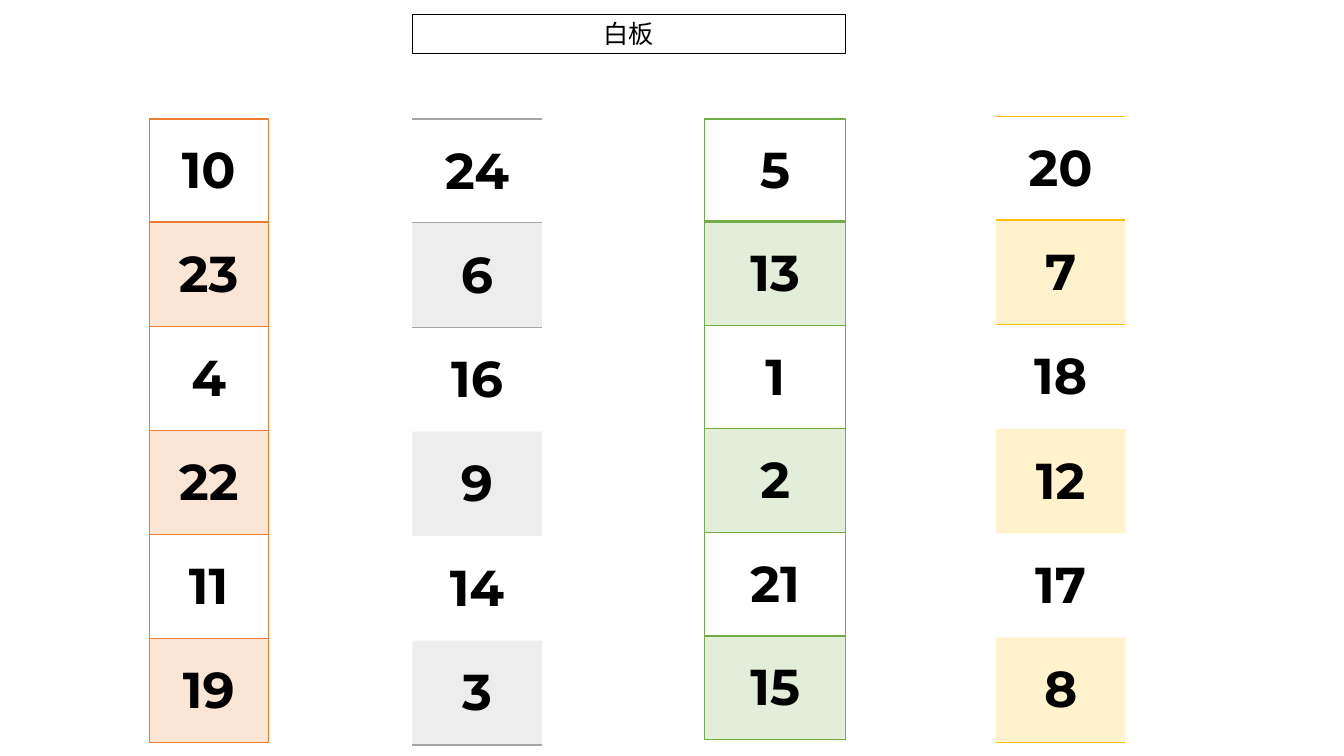
"""Build a whiteboard seating slide with four columns of seat numbers."""
from dataclasses import dataclass

from lxml.etree import SubElement
from pptx import Presentation
from pptx.dml.color import RGBColor
from pptx.enum.shapes import MSO_SHAPE
from pptx.enum.text import MSO_ANCHOR, PP_ALIGN
from pptx.oxml.ns import qn
from pptx.util import Pt

BLACK = RGBColor(0x00, 0x00, 0x00)
WHITE = RGBColor(0xFF, 0xFF, 0xFF)
ORANGE = RGBColor(0xED, 0x7D, 0x31)
GRAY = RGBColor(0xA5, 0xA5, 0xA5)
GREEN = RGBColor(0x70, 0xAD, 0x47)
GOLD = RGBColor(0xFF, 0xC0, 0x00)

NO_STYLE = "{2D5ABB26-0587-4C30-8999-92F81FD0307C}"
SEAT_FONT = {"name": "Montserrat", "size": Pt(36), "bold": True}
LABEL_FONT = {"name": "Calibri", "size": Pt(18), "bold": False}


@dataclass
class SeatColumn:
    """Hold the place, look and numbers of one column of seats."""
    left: float
    top: float
    width: float
    first_row: float
    other_row: float
    color: RGBColor
    gridded: bool
    seats: list


SEAT_COLUMNS = [
    SeatColumn(106.6, 85, 85, 73.6, 74.4, ORANGE, True, [10, 23, 4, 22, 11, 19]),
    SeatColumn(294.5, 85, 92.5, 74.2, 74.6, GRAY, False, [24, 6, 16, 9, 14, 3]),
    SeatColumn(503.3, 85, 100.8, 73.3, 74, GREEN, True, [5, 13, 1, 2, 21, 15]),
    SeatColumn(711.4, 83, 92.5, 74.2, 74.6, GOLD, False, [20, 7, 18, 12, 17, 8]),
]


def write_text(text_frame, text, font_format):
    """Write one centred black paragraph."""
    paragraph = text_frame.paragraphs[0]
    paragraph.alignment = PP_ALIGN.CENTER
    run = paragraph.add_run()
    run.text = text
    for name, value in font_format.items():
        setattr(run.font, name, value)
    run.font.color.rgb = BLACK


def tint_cell(cell, color):
    """Fill a cell with its column colour at 20% opacity."""
    cell.fill.solid()
    cell.fill.fore_color.rgb = color
    color_element = cell._tc.tcPr.find(qn("a:solidFill"))[0]
    SubElement(color_element, qn("a:alpha"), val="20000")


def add_borders(cell, color, widths):
    """Draw the given sides of a cell, listed in L, R, T, B order."""
    properties = cell._tc.get_or_add_tcPr()
    for position, (side, width) in enumerate(widths.items()):
        line = SubElement(properties, qn(f"a:ln{side}"), w=str(Pt(width)))
        fill = SubElement(line, qn("a:solidFill"))
        SubElement(fill, qn("a:srgbClr"), val=str(color))
        properties.insert(position, line)


def border_widths(row, last_row, gridded):
    """Return the border widths of a cell by side."""
    if gridded:
        return {"L": 1, "R": 1, "T": 2 if row == 1 else 1, "B": 2 if row == 0 else 1}
    return {0: {"T": 1, "B": 1}, 1: {"T": 1}, last_row: {"B": 1}}.get(row, {})


def add_seat_column(slide, column):
    """Add a one-column table of seat numbers."""
    count = len(column.seats)
    height = column.first_row + (count - 1) * column.other_row
    frame = slide.shapes.add_table(
        count, 1, Pt(column.left), Pt(column.top), Pt(column.width), Pt(height))
    table = frame.table
    table.first_row = table.horz_banding = False
    table._tbl.tblPr.find(qn("a:tableStyleId")).text = NO_STYLE
    for row, seat in enumerate(column.seats):
        table.rows[row].height = Pt(column.other_row if row else column.first_row)
        cell = table.cell(row, 0)
        cell.vertical_anchor = MSO_ANCHOR.MIDDLE
        write_text(cell.text_frame, str(seat), SEAT_FONT)
        if row % 2:
            tint_cell(cell, column.color)
        else:
            cell.fill.background()
        add_borders(cell, column.color, border_widths(row, count - 1, column.gridded))


def add_whiteboard(slide):
    """Add the outlined whiteboard label."""
    shape = slide.shapes.add_shape(
        MSO_SHAPE.RECTANGLE, Pt(294.5), Pt(10.2), Pt(309.6), Pt(28))
    shape.shadow.inherit = False
    shape.fill.solid()
    shape.fill.fore_color.rgb = WHITE
    shape.line.color.rgb = BLACK
    shape.line.width = Pt(1)
    shape.text_frame.vertical_anchor = MSO_ANCHOR.MIDDLE
    write_text(shape.text_frame, "白板", LABEL_FONT)


def main():
    """Build and save the slide."""
    presentation = Presentation()
    presentation.slide_width = Pt(960)
    presentation.slide_height = Pt(540)
    slide = presentation.slides.add_slide(presentation.slide_layouts[6])
    add_whiteboard(slide)
    for column in SEAT_COLUMNS:
        add_seat_column(slide, column)
    presentation.save("out.pptx")


if __name__ == "__main__":
    main()
